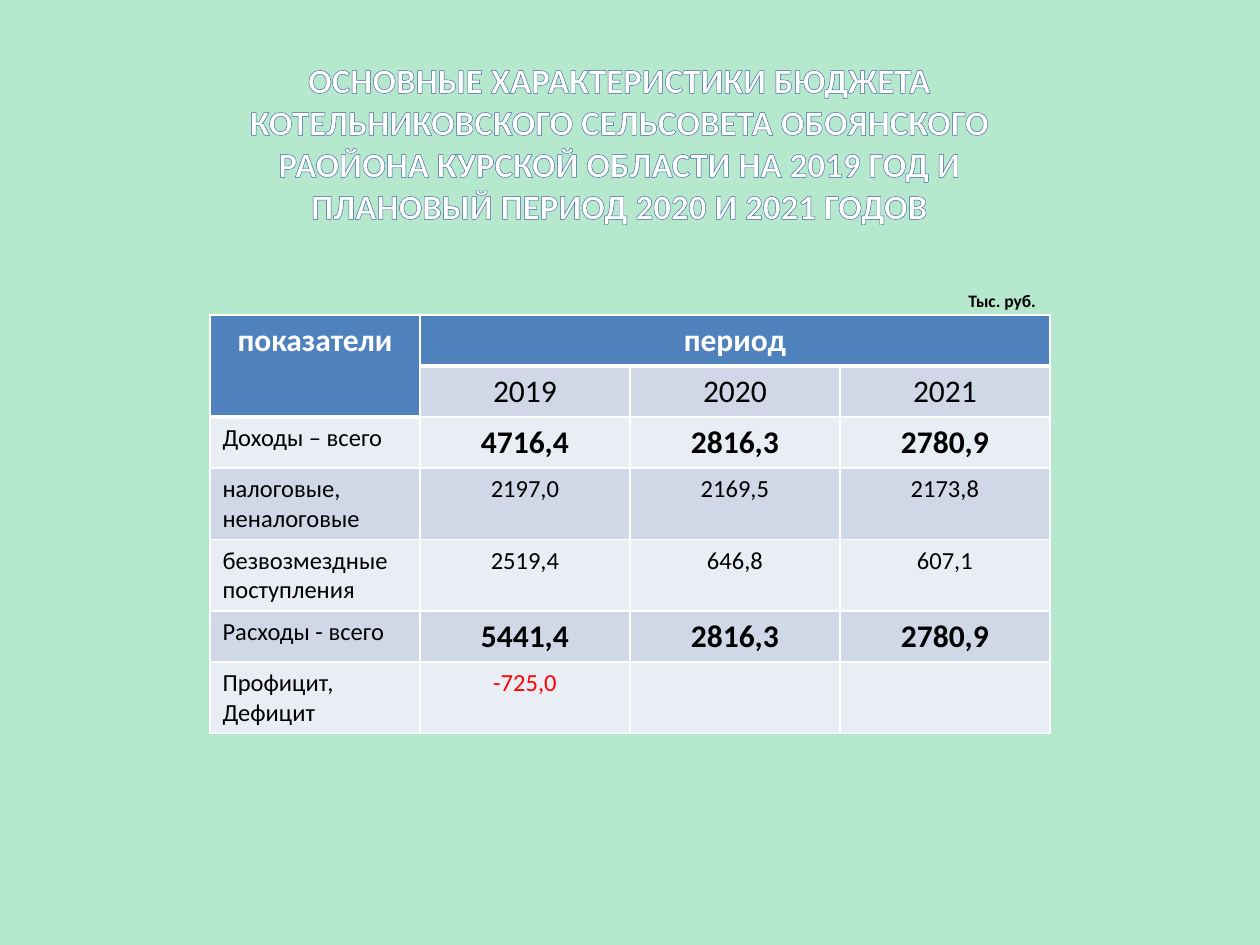
from pptx import Presentation
from pptx import util as u
from pptx.dml.color import RGBColor
from pptx.enum import text
from pptx.oxml import parse_xml
from pptx.oxml.ns import nsdecls

PX = u.Inches(1) / 126
FONT = "Calibri"
MINT = RGBColor(0xB5, 0xE8, 0xCC)
WHITE = RGBColor(0xFF, 0xFF, 0xFF)
BLACK = RGBColor(0, 0, 0)
RED = RGBColor(0xFF, 0, 0)
BLUE = RGBColor(0x4F, 0x81, 0xBD)
BAND_DARK = RGBColor(0xD0, 0xD8, 0xE8)
BAND_LIGHT = RGBColor(0xE9, 0xED, 0xF4)
OUTLINE = RGBColor(0x3A, 0x5F, 0x9F)

COLUMN, ROW = 210, 51
TITLE = ("ОСНОВНЫЕ ХАРАКТЕРИСТИКИ БЮДЖЕТА КОТЕЛЬНИКОВСКОГО СЕЛЬСОВЕТА "
         "ОБОЯНСКОГО РАОЙОНА КУРСКОЙ ОБЛАСТИ НА 2019 ГОД И "
         "ПЛАНОВЫЙ ПЕРИОД 2020 И 2021 ГОДОВ")
ROWS = [
    ["показатели", "период", "", ""],
    ["", "2019", "2020", "2021"],
    ["Доходы – всего", "4716,4", "2816,3", "2780,9"],
    ["налоговые, неналоговые", "2197,0", "2169,5", "2173,8"],
    ["безвозмездные поступления", "2519,4", "646,8", "607,1"],
    ["Расходы - всего", "5441,4", "2816,3", "2780,9"],
    ["Профицит,\nДефицит", "-725,0", "", ""],
]
TOTAL_ROWS = (2, 5)
THICK_BELOW = {(0, 0), (0, 1), (0, 2), (0, 3), (1, 0)}


def px(*lengths):
    return [round(length * PX) for length in lengths]


def write(frame, words, size=18, color=BLACK, bold=False, align=text.PP_ALIGN.LEFT):
    spans = []
    for index, line in enumerate(words.split("\n")):
        para = frame.paragraphs[0] if index == 0 else frame.add_paragraph()
        para.alignment = align
        span = para.add_run()
        span.text = line
        span.font.name = FONT
        span.font.size = u.Pt(size)
        span.font.bold = bold
        span.font.color.rgb = color
        spans.append(span)
    return spans


def line_xml(tag, color, points):
    return parse_xml(
        f'<a:{tag} {nsdecls("a")} w="{u.Pt(points)}"><a:solidFill>'
        f'<a:srgbClr val="{color}"/></a:solidFill></a:{tag}>')


def add_title(page):
    title = page.shapes.title
    title.left, title.top, title.width, title.height = px(189, 52, 861, 183)
    frame = title.text_frame
    frame.word_wrap = True
    frame.auto_size = text.MSO_AUTO_SIZE.SHAPE_TO_FIT_TEXT
    frame.vertical_anchor = text.MSO_ANCHOR.TOP
    for span in write(frame, TITLE, size=20, color=WHITE, bold=True,
                      align=text.PP_ALIGN.CENTER):
        span.font._element.insert(0, line_xml("ln", OUTLINE, 2.48))


def add_unit_label(page):
    box = page.shapes.add_textbox(*px(956, 284, 136, 34))
    box.text_frame.word_wrap = True
    box.text_frame.auto_size = text.MSO_AUTO_SIZE.SHAPE_TO_FIT_TEXT
    write(box.text_frame, "Тыс. руб.", size=10, bold=True)


def set_borders(cell, row, column):
    top = 3 if (row - 1, column) in THICK_BELOW else 1
    bottom = 3 if (row, column) in THICK_BELOW else 1
    properties = cell._tc.get_or_add_tcPr()
    edges = {"lnL": 1, "lnR": 1, "lnT": top, "lnB": bottom}
    for position, (tag, points) in enumerate(edges.items()):
        properties.insert(position, line_xml(tag, WHITE, points))


def fill_cell(cell, words, row, column):
    header = row == 0 or (row, column) == (1, 0)
    total = row in TOTAL_ROWS and column > 0
    cell.fill.solid()
    cell.fill.fore_color.rgb = BLUE if header else BAND_DARK if row % 2 else BAND_LIGHT
    set_borders(cell, row, column)
    if words:
        color = WHITE if header else RED if words.startswith("-") else BLACK
        centred = header or column > 0
        write(cell.text_frame, words, size=18 if row < 2 or total else 14,
              color=color, bold=header or total,
              align=text.PP_ALIGN.CENTER if centred else text.PP_ALIGN.LEFT)


def add_budget_table(page):
    columns = len(ROWS[0])
    table = page.shapes.add_table(
        len(ROWS), columns, *px(210, 315, COLUMN * columns, ROW * len(ROWS))).table
    table.horz_banding = False
    for row, entries in enumerate(ROWS):
        for column, words in enumerate(entries):
            fill_cell(table.cell(row, column), words, row, column)
    table.cell(0, 0).merge(table.cell(1, 0))
    table.cell(0, 1).merge(table.cell(0, 3))


def main():
    deck = Presentation()
    deck.slide_width, deck.slide_height = px(1260, 945)
    page = deck.slides.add_slide(deck.slide_layouts[5])
    page.background.fill.solid()
    page.background.fill.fore_color.rgb = MINT
    add_title(page)
    add_budget_table(page)
    add_unit_label(page)
    deck.save("out.pptx")


if __name__ == "__main__":
    main()
